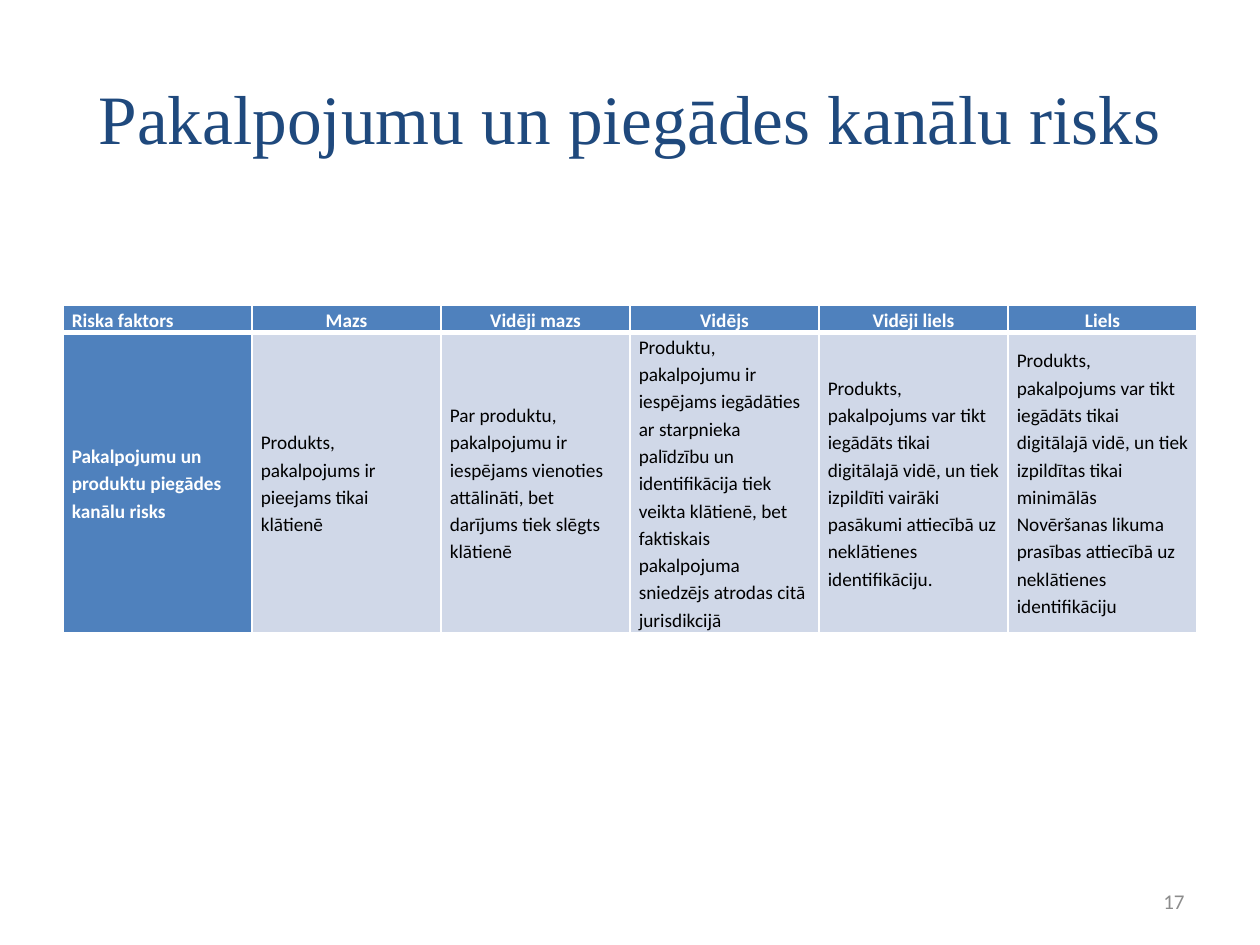
from lxml.etree import SubElement
from pptx import Presentation
from pptx.dml.color import RGBColor
from pptx.enum.text import MSO_ANCHOR, PP_ALIGN
from pptx.oxml.ns import qn
from pptx.util import Inches, Pt

COLORS = {"title": "1F497D", "header": "4F81BD", "body": "D0D8E8",
          "light": "FFFFFF", "dark": "000000", "number": "8C8C8C"}
RISK_LEVELS = [
    ("Riska faktors", "Pakalpojumu un produktu piegādes kanālu risks"),
    ("Mazs", "Produkts, pakalpojums ir pieejams tikai klātienē"),
    ("Vidēji mazs", "Par produktu, pakalpojumu ir iespējams vienoties attālināti, "
                    "bet darījums tiek slēgts klātienē"),
    ("Vidējs", "Produktu, pakalpojumu ir iespējams iegādāties ar starpnieka palīdzību "
               "un identifikācija tiek veikta klātienē, bet faktiskais pakalpojuma "
               "sniedzējs atrodas citā jurisdikcijā"),
    ("Vidēji liels", "Produkts, pakalpojums var tikt iegādāts tikai digitālajā vidē, "
                     "un tiek izpildīti vairāki pasākumi attiecībā uz neklātienes "
                     "identifikāciju."),
    ("Liels", "Produkts, pakalpojums var tikt iegādāts tikai digitālajā vidē, un tiek "
              "izpildītas tikai minimālās Novēršanas likuma prasības attiecībā uz "
              "neklātienes identifikāciju"),
]


def apply(target, values):
    for attribute, value in values.items():
        setattr(target, attribute, value)


def write(frame, text, color, font, paragraph):
    frame.text = text
    line = frame.paragraphs[0]
    apply(line, paragraph)
    apply(line.runs[0].font, font)
    line.runs[0].font.color.rgb = RGBColor.from_string(COLORS[color])


def place_title(heading, box):
    apply(heading, dict(zip(("left", "top", "width", "height"), box)))
    apply(heading.text_frame, {"word_wrap": True, "vertical_anchor": MSO_ANCHOR.MIDDLE})
    write(heading.text_frame, "Pakalpojumu un piegādes kanālu risks", "title",
          {"size": Pt(39.6), "name": "Times New Roman"}, {"alignment": PP_ALIGN.CENTER})


def place_number(slide, box):
    frame = slide.shapes.add_textbox(*box).text_frame
    apply(frame, {"word_wrap": True, "vertical_anchor": MSO_ANCHOR.MIDDLE})
    write(frame, "17", "number", {"size": Pt(12), "name": "Calibri"},
          {"alignment": PP_ALIGN.RIGHT})


def draw_borders(cell, widths):
    properties = cell._tc.get_or_add_tcPr()
    for index, (side, width) in enumerate(widths.items()):
        border = properties.makeelement(qn(f"a:{side}"), {"w": str(Pt(width))})
        fill = SubElement(border, qn("a:solidFill"))
        SubElement(fill, qn("a:srgbClr"), {"val": COLORS["light"]})
        properties.insert(index, border)


def fill_cell(cell, text, row, column):
    is_header = row == 0
    is_heading = is_header or column == 0
    apply(cell, {"margin_left": Inches(0.07), "margin_right": Inches(0.07),
                 "margin_top": 0, "margin_bottom": 0,
                 "vertical_anchor": MSO_ANCHOR.MIDDLE})
    cell.fill.solid()
    cell.fill.fore_color.rgb = RGBColor.from_string(COLORS["header" if is_heading else "body"])
    centred = is_header and column > 0
    write(cell.text_frame, text, "light" if is_heading else "dark",
          {"size": Pt(11), "name": "Calibri", "bold": is_heading},
          {"alignment": PP_ALIGN.CENTER if centred else PP_ALIGN.LEFT, "line_spacing": 1.15})
    draw_borders(cell, {"lnL": 1, "lnR": 1, "lnT": 1 if is_header else 3,
                        "lnB": 3 if is_header else 1})


def place_risk_table(slide, box):
    header_height = Inches(0.21)
    table = slide.shapes.add_table(2, len(RISK_LEVELS), *box).table
    table.rows[0].height = header_height
    table.rows[1].height = box[3] - header_height
    for column, texts in enumerate(RISK_LEVELS):
        table.columns[column].width = box[2] // len(RISK_LEVELS)
        for row, text in enumerate(texts):
            fill_cell(table.cell(row, column), text, row, column)


def main():
    deck = Presentation()
    apply(deck, {"slide_width": Inches(10), "slide_height": Inches(7.5)})
    slide = deck.slides.add_slide(deck.slide_layouts[5])
    width, height = deck.slide_width, deck.slide_height
    margin, content = int(width * 0.05), int(width * 0.9)
    number_width = Inches(2.33)
    place_title(slide.shapes.title, (margin, int(height * 0.04), content, Inches(1.25)))
    place_risk_table(slide, (margin, Inches(2.42), content, Inches(2.53)))
    place_number(slide, (margin + content - number_width, Inches(6.95),
                         number_width, Inches(0.4)))
    deck.save("out.pptx")


if __name__ == "__main__":
    main()
